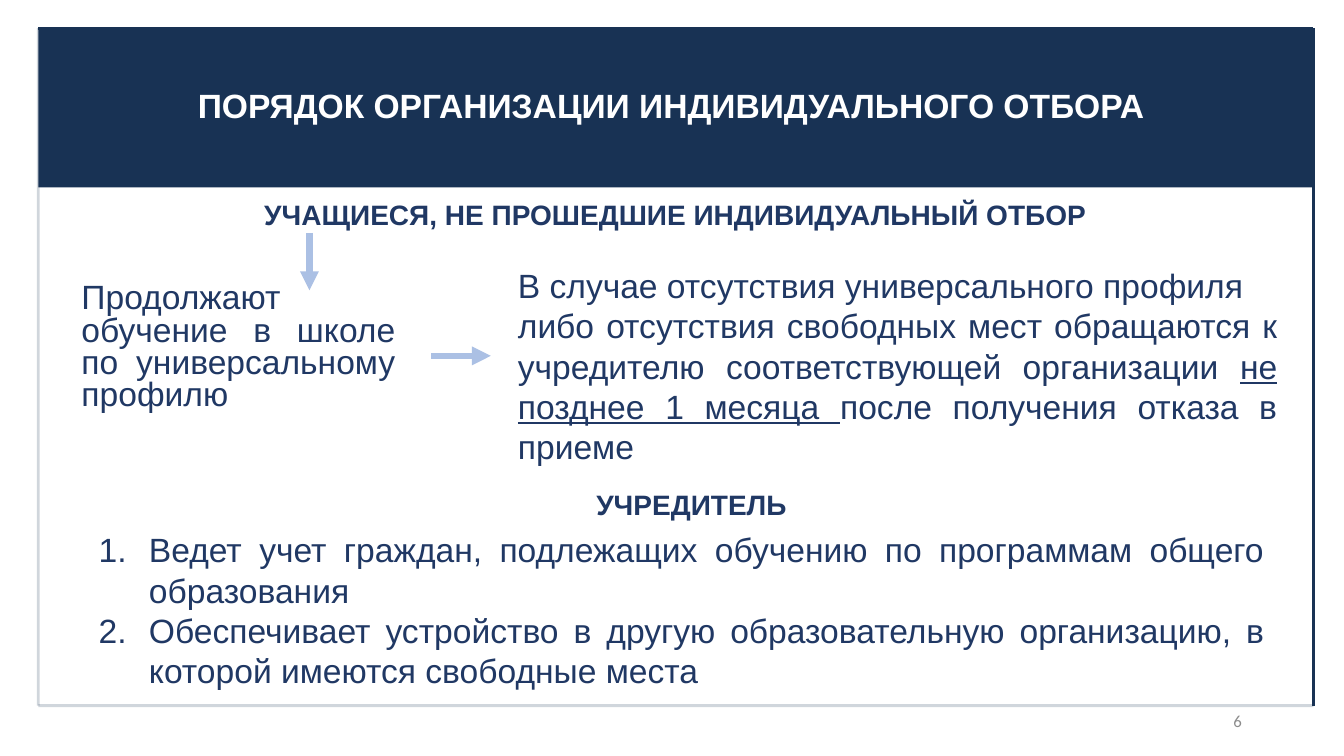
"""Builds the slide on the order of individual selection of pupils."""
from lxml import etree
from pptx import Presentation
from pptx.dml.color import RGBColor
from pptx.enum.shapes import MSO_CONNECTOR, MSO_SHAPE
from pptx.enum.text import MSO_ANCHOR, PP_ALIGN
from pptx.oxml.ns import qn
from pptx.util import Pt

PX = 9144
COLORS = {"band": "183254", "text": "203864", "arrow": "ABC0E4",
          "white": "FFFFFF", "number": "8C8C8C"}

TITLE = ["ПОРЯДОК ОРГАНИЗАЦИИ ИНДИВИДУАЛЬНОГО ОТБОРА "]
PUPILS = ["УЧАЩИЕСЯ, НЕ ПРОШЕДШИЕ ИНДИВИДУАЛЬНЫЙ ОТБОР"]
STAY = ["Продолжают обучение в школе по универсальному профилю"]
APPEAL = [
    "В случае отсутствия универсального профиля ",
    ("либо отсутствия свободных мест обращаются к учредителю соответствующей организации ",
     "не позднее 1 месяца ", "после получения отказа в приеме"),
]
FOUNDER = ["УЧРЕДИТЕЛЬ"]
DUTIES = [
    "Ведет учет граждан, подлежащих обучению по программам общего образования",
    "Обеспечивает устройство в другую образовательную организацию, "
    "в которой имеются свободные места",
]
PAGE = ["6"]

BAND = (38, 28, 1265, 158)
HEADING = {"size": 20, "bold": True, "align": PP_ALIGN.CENTER}
TEXTS = [
    (STAY, (71, 277, 331, 152), {"spacing": 0.8, "before": 10}),
    (PAGE, (942, 695, 300, 40), {"size": 12, "font": "Calibri", "color": "number",
                                 "align": PP_ALIGN.RIGHT, "anchor": MSO_ANCHOR.MIDDLE}),
    (PUPILS, (38, 191, 1264, 44), HEADING),
    (APPEAL, (504, 258, 773, 212), {}),
    (FOUNDER, (54, 479, 1264, 44), HEADING),
    (DUTIES, (88, 520, 1176, 212), {"numbered": True}),
]
LEFT, TOP, RIGHT, BOTTOM = 38, 28, 1303, 700
FRAME = [
    ((LEFT, TOP, RIGHT, TOP), 100),
    ((RIGHT, TOP, RIGHT, BOTTOM), 100),
    ((LEFT, TOP, LEFT, BOTTOM), 20),
    ((RIGHT, BOTTOM, LEFT, BOTTOM), 20),
]
ARROWS = [(307, 231, 307, 288), (428, 353, 487, 353)]


def rgb(name):
    return RGBColor.from_string(COLORS[name])


def emu(lengths):
    return [length * PX for length in lengths]


def write(frame, paragraphs, size=24, bold=False, color="text", font="Arial",
          align=PP_ALIGN.JUSTIFY, anchor=MSO_ANCHOR.TOP, spacing=None, before=None,
          numbered=False):
    frame.word_wrap = True
    frame.vertical_anchor = anchor
    for index, content in enumerate(paragraphs):
        line = frame.add_paragraph() if index else frame.paragraphs[0]
        line.alignment = align
        if spacing:
            line.line_spacing = spacing
        if before:
            line.space_before = Pt(before)
        if numbered:
            properties = line._p.get_or_add_pPr()
            properties.set("marL", str(50 * PX))
            properties.set("indent", str(-50 * PX))
            etree.SubElement(properties, qn("a:buFont"), typeface="+mj-lt")
            etree.SubElement(properties, qn("a:buAutoNum"), type="arabicPeriod")
        parts = (content,) if isinstance(content, str) else content
        for position, part in enumerate(parts):
            run = line.add_run()
            run.text = part
            run.font.name = font
            run.font.size = Pt(size)
            run.font.bold = bold
            run.font.color.rgb = rgb(color)
            if position == 1:
                run.font.underline = True


def draw_line(shapes, ends, color, width, opacity=100, arrow=False):
    line = shapes.add_connector(MSO_CONNECTOR.STRAIGHT, *emu(ends))
    line.line.color.rgb = rgb(color)
    line.line.width = Pt(width)
    etree.SubElement(line._element.spPr, qn("a:effectLst"))
    outline = line.line._get_or_add_ln()
    if opacity < 100:
        tint = outline.find(".//" + qn("a:srgbClr"))
        etree.SubElement(tint, qn("a:alpha"), val=str(opacity * 1000))
    if arrow:
        etree.SubElement(outline, qn("a:tailEnd"), type="triangle")


def main():
    deck = Presentation()
    deck.slide_width, deck.slide_height = 12192000, 750 * PX
    shapes = deck.slides.add_slide(deck.slide_layouts[6]).shapes

    band = shapes.add_shape(MSO_SHAPE.RECTANGLE, *emu(BAND))
    band.shadow.inherit = False
    band.fill.solid()
    band.fill.fore_color.rgb = rgb("band")
    band.line.fill.background()
    write(band.text_frame, TITLE, bold=True, color="white", align=PP_ALIGN.CENTER,
          anchor=MSO_ANCHOR.MIDDLE, spacing=0.9)

    for ends, opacity in FRAME:
        draw_line(shapes, ends, "band", 2, opacity)
    for paragraphs, box, style in TEXTS:
        write(shapes.add_textbox(*emu(box)).text_frame, paragraphs, **style)
    for ends in ARROWS:
        draw_line(shapes, ends, "arrow", 4.5, arrow=True)

    deck.save("out.pptx")


if __name__ == "__main__":
    main()
